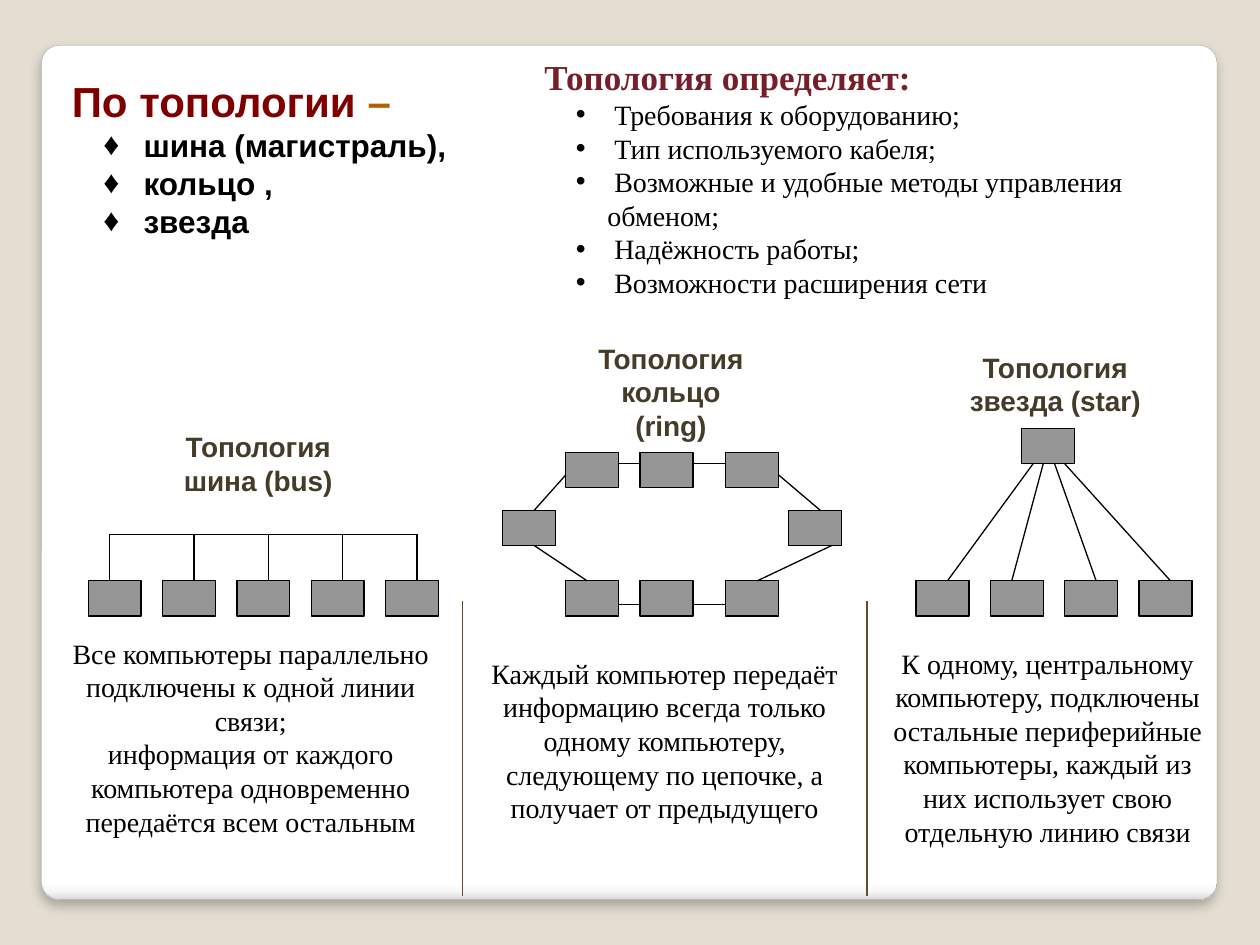
from pptx import Presentation
from pptx.dml.color import RGBColor
from pptx.enum.shapes import MSO_CONNECTOR, MSO_SHAPE
from pptx.enum.text import MSO_ANCHOR, MSO_AUTO_SIZE, PP_ALIGN
from pptx.oxml import parse_xml
from pptx.oxml.ns import nsdecls
from pptx.util import Inches, Pt

SANS, SERIF = "Arial", "Times New Roman"
LABEL = dict(name=SANS, size=Pt(16), bold=True, color="443C29")
PLAIN = dict(name=SERIF, size=Pt(16), bold=False, color="000000")
PC_WIDTH, PC_HEIGHT, PC_STEP = 0.42, 0.28, 0.59


def rgb(value):
    return RGBColor.from_string(value)


def xml(markup):
    return parse_xml(markup.replace(">", f" {nsdecls('a')}>", 1))


def place(shape, box):
    for side, length in zip(("left", "top", "width", "height"), box):
        setattr(shape, side, Inches(length))


def set_frame(shape, inset=0.05):
    frame = shape.text_frame
    formats = dict(word_wrap=True, auto_size=MSO_AUTO_SIZE.NONE,
                   vertical_anchor=MSO_ANCHOR.TOP,
                   margin_left=Inches(0.1), margin_right=Inches(0.1),
                   margin_top=Inches(inset), margin_bottom=Inches(inset))
    for key, value in formats.items():
        setattr(frame, key, value)
    return frame


def add_span(para, text, style):
    span = para.add_run()
    span.text = text
    for key, value in style.items():
        if key == "color":
            span.font.color.rgb = rgb(value)
        else:
            setattr(span.font, key, value)


def add_para(frame, text, style, align=PP_ALIGN.LEFT, bullet=None, margin=0):
    first = frame.paragraphs[0]
    para = frame.add_paragraph() if first.runs else first
    formats = dict(alignment=align, line_spacing=1.0,
                   space_before=Pt(0), space_after=Pt(0))
    for key, value in formats.items():
        setattr(para, key, value)
    props = para._p.get_or_add_pPr()
    props.set("marL", str(Inches(margin)))
    props.set("indent", str(Inches(-0.25 if bullet else 0)))
    props.append(xml(f'<a:buChar char="{bullet}"/>'.replace("/>", "></a:buChar>")
                     if bullet else "<a:buNone></a:buNone>"))
    add_span(para, text, style)
    return para


def add_line(page, start, end, color="000000"):
    line = page.shapes.add_connector(
        MSO_CONNECTOR.STRAIGHT, *(Inches(n) for n in (*start, *end)))
    line.line.color.rgb = rgb(color)
    line.line.width = Pt(0.75)
    line._element.spPr.append(xml("<a:effectLst></a:effectLst>"))


def add_rect(page, box, fill, line=None):
    rect = page.shapes.add_shape(MSO_SHAPE.RECTANGLE, *map(Inches, box))
    rect.shadow.inherit = False
    rect.fill.solid()
    rect.fill.fore_color.rgb = rgb(fill)
    if line:
        rect.line.color.rgb = rgb(line)
        rect.line.width = Pt(0.75)
    else:
        rect.line.fill.background()
    return rect


def add_network(page, left, top, computers, links):
    """Draw computers and links given relative to the corner (left, top)."""
    for x, y in computers:
        add_rect(page, (left + x, top + y, PC_WIDTH, PC_HEIGHT), "969696", "000000")
    for (x1, y1), (x2, y2) in links:
        add_line(page, (left + x1, top + y1), (left + x2, top + y2))


def bus(page, left, top):
    drop = 0.37
    computers = [(PC_STEP * i, drop) for i in range(5)]
    stubs = [0.17] + [0.25 + PC_STEP * i for i in range(1, 5)]
    links = [((x, 0), (x, drop)) for x in stubs]
    links.append(((stubs[0], 0), (stubs[-1], 0)))
    add_network(page, left, top, computers, links)


def ring(page, left, top):
    columns, side, bottom = (0.5, 1.09, 1.77), 0.46, 1.02
    computers = [(x, y) for y in (0, bottom) for x in columns]
    computers += [(0, side), (2.27, side)]
    links = [((a + PC_WIDTH, y), (b, y)) for y in (0.09, 1.21)
             for a, b in zip(columns, columns[1:])]
    links += [((0.5, 0.18), (0.25, side)), ((2.19, 0.18), (2.52, side)),
              ((0.25, side + PC_HEIGHT), (0.67, bottom)),
              ((2.61, side + PC_HEIGHT), (2.02, bottom))]
    add_network(page, left, top, computers, links)


def star(page, left, top):
    drop = 1.21
    computers = [(0.84, 0)] + [(PC_STEP * i, drop) for i in range(4)]
    ends = zip((0.93, 1.01, 1.1, 1.18), (0.25, 0.76, 1.43, 2.02))
    links = [((a, PC_HEIGHT), (b, drop)) for a, b in ends]
    add_network(page, left, top, computers, links)


def add_label(page, box, text):
    add_para(set_frame(add_rect(page, box, "FFFFFF")), text, LABEL, PP_ALIGN.CENTER)


def add_caption(page, box, paragraphs):
    frame = set_frame(page.shapes.add_textbox(*map(Inches, box)))
    for text in paragraphs:
        add_para(frame, text, PLAIN, PP_ALIGN.CENTER)


def add_card(page, box):
    """Put the rounded white panel behind everything else."""
    card = page.shapes.add_shape(MSO_SHAPE.ROUNDED_RECTANGLE, *map(Inches, box))
    card.adjustments[0] = 0.021
    card.line.color.rgb = rgb("A4A4A4")
    card.line.width = Pt(0.16)
    card.fill.gradient()
    card.fill.gradient_angle = 270
    stops = card._element.spPr.find(".//{*}gsLst")
    for stop in list(stops):
        stops.remove(stop)
    for percent, color in ((0, "FFFFFF"), (98, "FFFFFF"), (99, "F7F7F7"), (100, "DADADA")):
        stops.append(xml(f'<a:gs pos="{percent * 1000}"><a:srgbClr val="{color}"/></a:gs>'))
    card.shadow.inherit = False
    card._element.spPr.find("{*}effectLst").append(xml(
        f'<a:outerShdw blurRad="{Pt(6)}" dist="{Pt(4)}" dir="5400000" rotWithShape="0">'
        '<a:srgbClr val="000000"><a:alpha val="25000"/></a:srgbClr></a:outerShdw>'))
    page.shapes._spTree.insert(2, card._element)


def fill_kinds(title, body, box):
    left, top, width, height = box
    heading = 0.4
    place(title, (left, top, width, heading))
    style = dict(name=SANS, size=Pt(24), bold=True, color="800000")
    para = add_para(set_frame(title, 0), "По топологии ", style)
    add_span(para, "–", style | dict(color="B45F07"))
    place(body, (left, top + heading, width, height - heading))
    frame = set_frame(body, 0)
    style = dict(name=SANS, size=Pt(18), bold=True, color="000000")
    for text in (" шина (магистраль),", " кольцо ,", " звезда"):
        add_para(frame, text, style, bullet="♦", margin=0.5)


def fill_effects(body, box):
    place(body, box)
    frame = set_frame(body)
    add_para(frame, "Топология определяет:",
             dict(name=SERIF, size=Pt(20), bold=True, color="771F28"))
    for text, bullet in ((" Требования к оборудованию;", "•"),
                         (" Тип используемого кабеля;", "•"),
                         (" Возможные и удобные методы управления", "•"),
                         ("обменом;", None),
                         (" Надёжность работы;", "•"),
                         (" Возможности расширения сети", "•")):
        add_para(frame, text, PLAIN, bullet=bullet, margin=0.5)


def main():
    deck = Presentation()
    deck.slide_width, deck.slide_height = Inches(10), Inches(7.5)
    page = deck.slides.add_slide(deck.slide_layouts[3])
    page.background.fill.solid()
    page.background.fill.fore_color.rgb = rgb("E3DED1")
    title, kinds, effects = page.placeholders
    add_card(page, (0.33, 0.36, 9.33, 6.78))
    fill_kinds(title, kinds, (0.47, 0.6, 3.59, 1.31))
    fill_effects(effects, (4.22, 0.39, 4.99, 2.05))
    bus(page, 0.7, 4.24)
    ring(page, 3.99, 3.59)
    star(page, 7.27, 3.4)
    add_label(page, (1.23, 3.36, 1.64, 0.56), "Топология шина (bus)")
    add_label(page, (4.59, 2.66, 1.47, 0.56), "Топология кольцо (ring)")
    add_label(page, (7.48, 2.73, 1.79, 0.56), "Топология звезда (star)")
    for x in (3.67, 6.88):
        add_line(page, (x, 4.77), (x, 7.11), "674D26")
    add_caption(page, (0.39, 5, 3.2, 1.72), (
        "Все компьютеры параллельно подключены к одной линии связи;",
        "информация от каждого компьютера одновременно передаётся всем остальным"))
    add_caption(page, (3.75, 5.16, 3.05, 1.45), (
        "Каждый компьютер передаёт информацию всегда только одному компьютеру,",
        "следующему по цепочке, а получает от предыдущего"))
    add_caption(page, (6.95, 5.08, 2.73, 1.72), (
        "К одному, центральному компьютеру, подключены остальные периферийные "
        "компьютеры, каждый из них использует свою отдельную линию связи",))
    deck.save("out.pptx")


if __name__ == "__main__":
    main()
